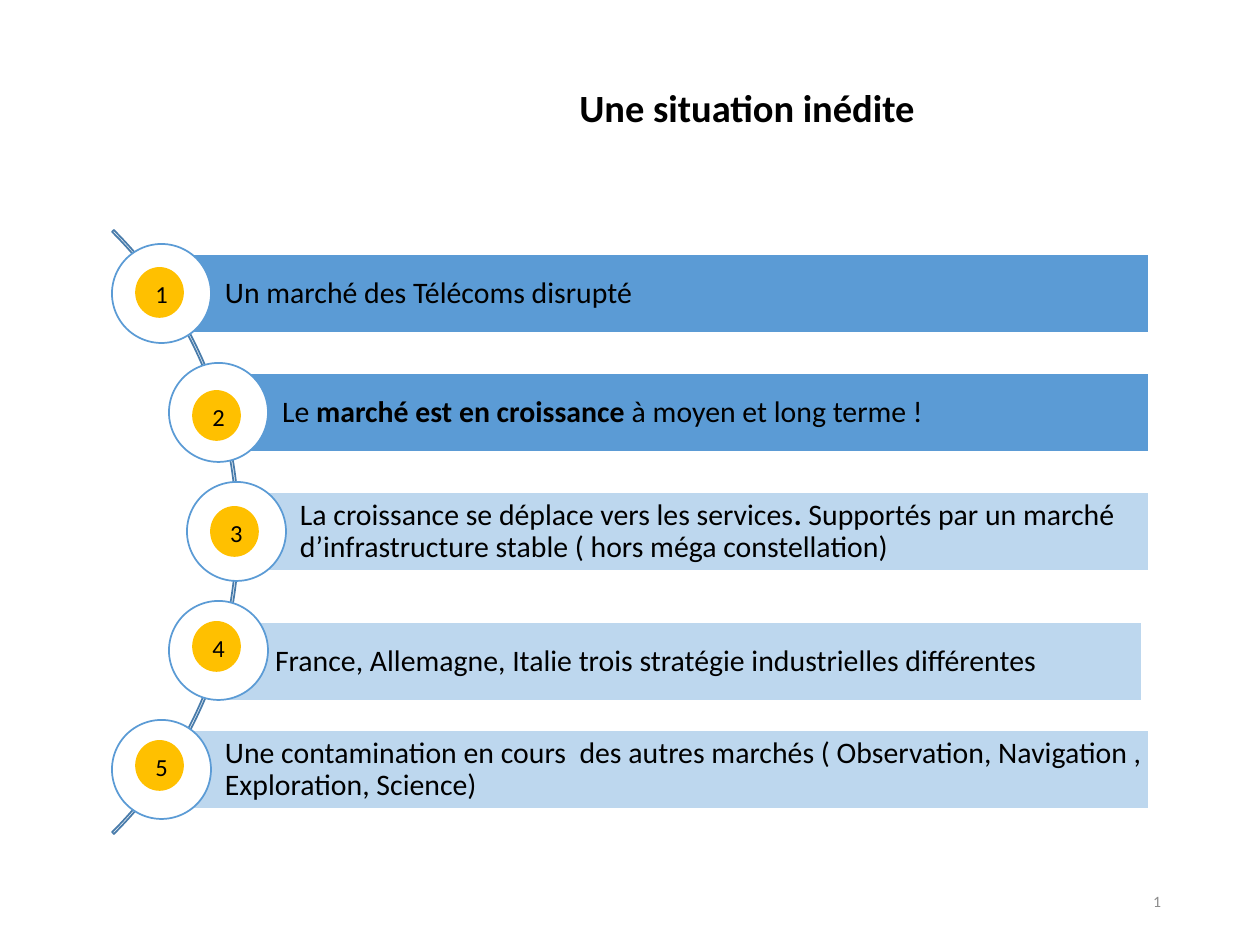
from pptx import Presentation
from pptx.dml.color import RGBColor
from pptx.enum.shapes import MSO_SHAPE as SHAPE
from pptx.enum.text import MSO_ANCHOR as ANCHOR, PP_ALIGN as ALIGN
from pptx.util import Emu, Pt

PX = 914400 // 126
FONT = "Calibri"
BLACK = RGBColor(0x00, 0x00, 0x00)
WHITE = RGBColor(0xFF, 0xFF, 0xFF)
GREY = RGBColor(0x8C, 0x8C, 0x8C)
BLUE = RGBColor(0x5B, 0x9B, 0xD5)
LIGHT_BLUE = RGBColor(0xBD, 0xD7, 0xEE)
ARC_BLUE = RGBColor(0x49, 0x7C, 0xAB)
GOLD = RGBColor(0xFF, 0xC0, 0x00)

TITLE = "Une situation inédite"
PAGE = "1"
# left of circle, bar shift (x, y), badge top, bar colour, runs as (text, bold)
ITEMS = [
    (112, (0, 0), 268, BLUE, [("Un marché des Télécoms disrupté", False)]),
    (169, (0, 0), 391, BLUE, [
        ("Le ", False), ("marché est en croissance ", True),
        ("à moyen et long terme !", False)]),
    (187, (0, 0), 507, LIGHT_BLUE, [
        ("La croissance se déplace vers les services", False), (". ", True),
        ("Supportés par un marché d’infrastructure stable "
         "( hors méga constellation)", False)]),
    (169, (-7, 11), 622, LIGHT_BLUE, [
        ("France, Allemagne, Italie trois stratégie industrielles différentes", False)]),
    (112, (0, 0), 741, LIGHT_BLUE, [
        ("Une contamination en cours  des autres marchés "
         "( Observation, Navigation , Exploration, Science)", False)]),
]
TOP, PITCH, CIRCLE = 244, 119, 99
BAR_H, BAR_RIGHT = 79, 1149
BADGE_W, BADGE_H, BADGE_DX = 47, 49, 24


def emu(*lengths):
    return [Emu(n * PX) for n in lengths]


def write(s, runs, size, color=BLACK, align=ALIGN.LEFT, insets=(6, 6, 6, 6),
          spacing=None, wrap=True):
    tf = s.text_frame
    tf.word_wrap = wrap
    tf.vertical_anchor = ANCHOR.MIDDLE
    tf.margin_left, tf.margin_top, tf.margin_right, tf.margin_bottom = emu(*insets)
    p = tf.paragraphs[0]
    p.alignment = align
    if spacing:
        p.line_spacing = spacing
    for text, bold in runs:
        r = p.add_run()
        r.text = text
        r.font.name = FONT
        r.font.size = Pt(size)
        r.font.bold = bold
        r.font.color.rgb = color


def add_shape(kind, box, fill, line):
    s = slide.shapes.add_shape(kind, *emu(*box))
    s.shadow.inherit = False
    if fill is None:
        s.fill.background()
    else:
        s.fill.solid()
        s.fill.fore_color.rgb = fill
    s.line.color.rgb = line
    s.line.width = Pt(1)
    return s


prs = Presentation()
prs.slide_width, prs.slide_height = emu(1260, 945)
slide = prs.slides.add_slide(prs.slide_layouts[6])

title = slide.shapes.add_textbox(*emu(285, 19, 924, 183))
write(title, [(TITLE, True)], 22, align=ALIGN.CENTER, spacing=0.9)
page = slide.shapes.add_textbox(*emu(890, 876, 283, 50))
write(page, [(PAGE, False)], 9, GREY, ALIGN.RIGHT, insets=(12, 6, 12, 6))

arc = add_shape(SHAPE.BLOCK_ARC, (-615, 105, 854, 854), None, ARC_BLUE)
for i, value in enumerate((189, 27, 0.003)):
    arc.adjustments[i] = value

for i, (x, (dx, dy), _, color, runs) in enumerate(ITEMS):
    y = TOP + i * PITCH
    left = x + CIRCLE // 2 + 1
    bar = add_shape(
        SHAPE.RECTANGLE,
        (left + dx, y + (CIRCLE - BAR_H) // 2 + dy, BAR_RIGHT - left, BAR_H),
        color, WHITE)
    write(bar, runs, 17, insets=(63, 6, 6, 6), spacing=0.9)
    add_shape(SHAPE.OVAL, (x, y, CIRCLE, CIRCLE), WHITE, BLUE)

for number, (x, _, y, _, _) in enumerate(ITEMS, 1):
    badge = add_shape(SHAPE.FLOWCHART_CONNECTOR,
                      (x + BADGE_DX, y, BADGE_W, BADGE_H), GOLD, GOLD)
    write(badge, [(str(number), False)], 14, align=ALIGN.CENTER,
          insets=(4, 2, 0, 0), wrap=False)

prs.save("out.pptx")
